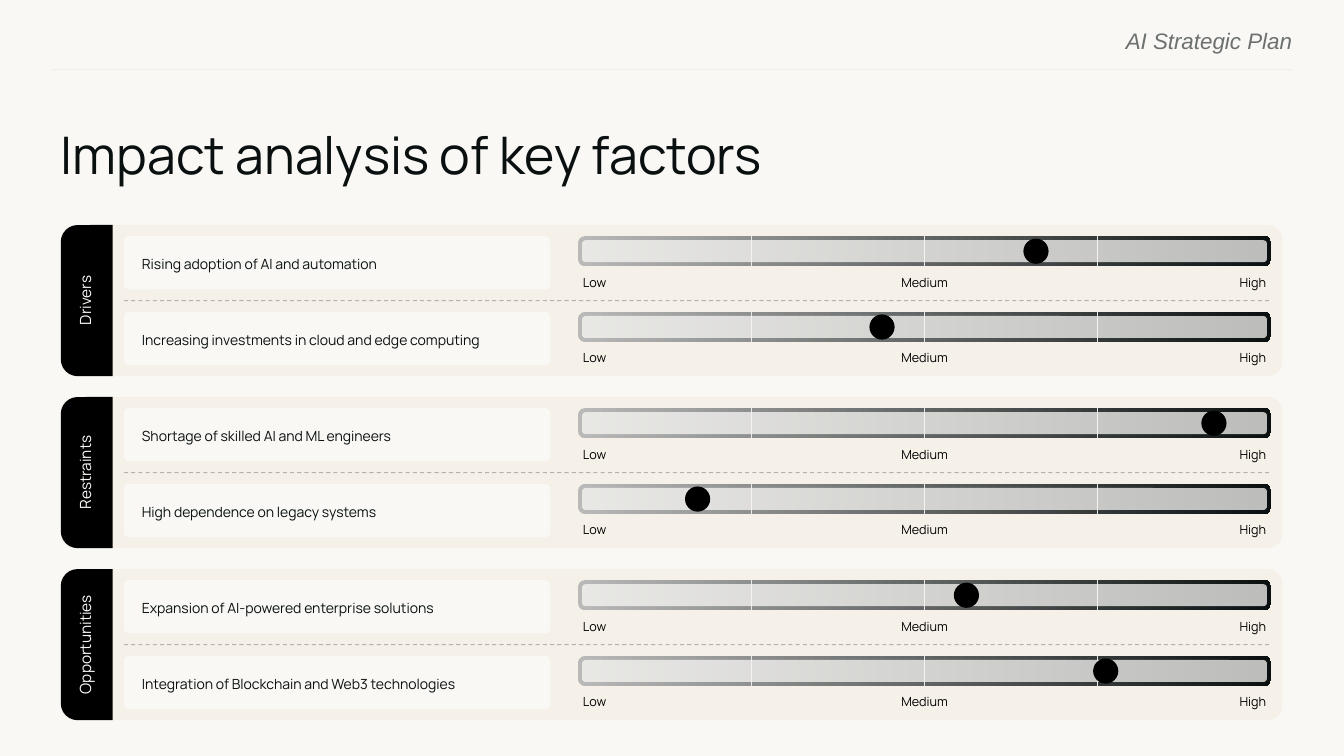
from dataclasses import dataclass

from pptx import Presentation
from pptx.dml.color import RGBColor
from pptx.enum.dml import MSO_LINE
from pptx.enum.shapes import MSO_CONNECTOR, MSO_SHAPE
from pptx.enum.text import MSO_ANCHOR, PP_ALIGN
from pptx.oxml.ns import qn
from pptx.oxml.xmlchemy import OxmlElement
from pptx.shapes.autoshape import Shape
from pptx.shapes.connector import Connector
from pptx.slide import Slide
from pptx.util import Pt

ROUNDED = MSO_SHAPE.ROUNDED_RECTANGLE
TAB = MSO_SHAPE.ROUND_2_SAME_RECTANGLE
OVAL = MSO_SHAPE.OVAL
STRAIGHT = MSO_CONNECTOR.STRAIGHT
DASH = MSO_LINE.DASH
TOP, MIDDLE = MSO_ANCHOR.TOP, MSO_ANCHOR.MIDDLE
LEFT, CENTER, RIGHT = PP_ALIGN.LEFT, PP_ALIGN.CENTER, PP_ALIGN.RIGHT

PAPER = RGBColor(0xF9, 0xF8, 0xF5)
SAND = RGBColor(0xF5, 0xF1, 0xE8)
INK = RGBColor(0x09, 0x10, 0x0F)
BLACK = RGBColor(0x00, 0x00, 0x00)
SILVER = RGBColor(0xB9, 0xB9, 0xB9)
DIVIDER = RGBColor(0xE9, 0xE7, 0xE7)
RULE = RGBColor(0xEF, 0xEF, 0xEF)
GRAY = RGBColor(0x6C, 0x70, 0x6F)

PANEL_LEFT, PANEL_TOP, PANEL_WIDTH, PANEL_HEIGHT = 43.4, 160.7, 872.6, 108
PANEL_STEP = 122.86
TAB_WIDTH = 37
ROW_INSET, ROW_STEP = 7.9, 54.15
CARD_LEFT, CARD_WIDTH, CARD_HEIGHT = 88.5, 304.6, 38.2
BAR_LEFT, BAR_WIDTH, BAR_HEIGHT = 412.8, 495.2, 21.7
SCALE_OFFSET, SCALE_HEIGHT = 23.9, 16.6
KNOB_SIZE = 18


@dataclass(frozen=True)
class Box:
    left: float
    top: float
    width: float
    height: float


@dataclass(frozen=True)
class TextStyle:
    size: float
    color: RGBColor
    font: str = "Manrope"
    italic: bool = False
    align: PP_ALIGN = LEFT
    anchor: MSO_ANCHOR = TOP
    insets: tuple[float, float, float, float] = (0, 0, 0, 0)
    line_spacing: float | None = None


@dataclass(frozen=True)
class Factor:
    text: str
    knob_center: float


@dataclass(frozen=True)
class Group:
    name: str
    label_width: float
    factors: tuple[Factor, ...]


@dataclass(frozen=True)
class ScaleLabel:
    text: str
    left: float
    width: float
    align: PP_ALIGN
    right_inset: float


HEADER = TextStyle(16, GRAY, font="Arial", italic=True, align=RIGHT)
TITLE = TextStyle(37, INK)
CARD = TextStyle(10, INK, anchor=MIDDLE, insets=(11.8, 0, 7.2, 2.9), line_spacing=1.4)
TAB_LABEL = TextStyle(11, PAPER, align=CENTER, anchor=MIDDLE, insets=(7.2, 3.6, 7.2, 5.8))

GROUPS = (
    Group("Drivers", 63.4, (
        Factor("Rising adoption of AI and automation", 740),
        Factor("Increasing investments in cloud and edge computing", 630),
    )),
    Group("Restraints", 87.1, (
        Factor("Shortage of skilled AI and ML engineers", 867.1),
        Factor("High dependence on legacy systems", 498.3),
    )),
    Group("Opportunities", 108, (
        Factor("Expansion of AI-powered enterprise solutions", 690.3),
        Factor("Integration of Blockchain and Web3 technologies", 789.8),
    )),
)

SCALE_LABELS = (
    ScaleLabel("Low", 412.8, 41, LEFT, 7.2),
    ScaleLabel("High", 867, 41, RIGHT, 3.6),
    ScaleLabel("Medium", 633.8, 53.2, CENTER, 3.6),
)


def write_text(shape: Shape, text: str, style: TextStyle) -> None:
    frame = shape.text_frame
    frame.word_wrap = True
    frame.vertical_anchor = style.anchor
    left, top, right, bottom = style.insets
    frame.margin_left, frame.margin_top = Pt(left), Pt(top)
    frame.margin_right, frame.margin_bottom = Pt(right), Pt(bottom)
    paragraph = frame.paragraphs[0]
    paragraph.alignment = style.align
    paragraph.line_spacing = style.line_spacing
    run = paragraph.add_run()
    run.text = text
    run.font.name = style.font
    run.font.size = Pt(style.size)
    run.font.italic = style.italic
    run.font.color.rgb = style.color


def add_text(slide: Slide, box: Box, text: str, style: TextStyle) -> Shape:
    shape = slide.shapes.add_textbox(Pt(box.left), Pt(box.top), Pt(box.width), Pt(box.height))
    write_text(shape, text, style)
    return shape


def add_block(slide: Slide, kind: MSO_SHAPE, box: Box, color: RGBColor,
              corners: tuple[float, ...] = ()) -> Shape:
    shape = slide.shapes.add_shape(kind, Pt(box.left), Pt(box.top), Pt(box.width), Pt(box.height))
    shape.shadow.inherit = False
    shape.fill.solid()
    shape.fill.fore_color.rgb = color
    shape.line.fill.background()
    for index, corner in enumerate(corners):
        shape.adjustments[index] = corner
    return shape


def add_line(slide: Slide, start: tuple[float, float], end: tuple[float, float],
             color: RGBColor) -> Connector:
    line = slide.shapes.add_connector(
        STRAIGHT, Pt(start[0]), Pt(start[1]), Pt(end[0]), Pt(end[1]))
    line.line.color.rgb = color
    line.line.width = Pt(0.75)
    line.element.spPr.append(OxmlElement("a:effectLst"))
    return line


def set_opacity(shape: Shape | Connector, percent: int) -> None:
    color = next(shape.element.spPr.iter(qn("a:srgbClr")))
    alpha = OxmlElement("a:alpha")
    alpha.set("val", str(percent * 1000))
    color.append(alpha)


def add_scale(slide: Slide, top: float, knob_center: float) -> None:
    bar = add_block(slide, ROUNDED, Box(BAR_LEFT, top, BAR_WIDTH, BAR_HEIGHT), SILVER, (0.239,))
    bar.fill.gradient()
    bar.fill.gradient_angle = 0
    for stop, color in zip(bar.fill.gradient_stops, (SILVER, INK)):
        stop.color.rgb = color
    for quarter in (1, 2, 3):
        x = BAR_LEFT + BAR_WIDTH * quarter / 4
        divider = add_line(slide, (x, top), (x, top + BAR_HEIGHT), DIVIDER)
        if quarter == 2:
            divider.begin_connect(bar, 0)
            divider.end_connect(bar, 2)
    track = add_block(slide, ROUNDED, Box(BAR_LEFT + 3, top + 3, BAR_WIDTH - 6, BAR_HEIGHT - 6),
                      PAPER, (0.16,))
    set_opacity(track, 75)
    for label in SCALE_LABELS:
        style = TextStyle(9, BLACK, align=label.align, insets=(3.6, 3.6, label.right_inset, 2.2))
        add_text(slide, Box(label.left, top + SCALE_OFFSET, label.width, SCALE_HEIGHT),
                 label.text, style)
    add_block(slide, OVAL, Box(knob_center - KNOB_SIZE / 2, top + (BAR_HEIGHT - KNOB_SIZE) / 2,
                               KNOB_SIZE, KNOB_SIZE), BLACK)


def add_group(slide: Slide, group: Group, top: float) -> None:
    add_block(slide, ROUNDED, Box(PANEL_LEFT, top, PANEL_WIDTH, PANEL_HEIGHT), SAND, (0.094,))
    middle = top + PANEL_HEIGHT / 2
    separator = add_line(slide, (CARD_LEFT, middle), (BAR_LEFT + BAR_WIDTH, middle), BLACK)
    separator.line.dash_style = DASH
    set_opacity(separator, 25)
    for index, factor in enumerate(group.factors):
        row_top = top + ROW_INSET + index * ROW_STEP
        card = add_block(slide, ROUNDED, Box(CARD_LEFT, row_top, CARD_WIDTH, CARD_HEIGHT),
                         PAPER, (0.099,))
        write_text(card, factor.text, CARD)
        add_scale(slide, row_top, factor.knob_center)
    center = PANEL_LEFT + TAB_WIDTH / 2
    tab = add_block(slide, TAB, Box(center - PANEL_HEIGHT / 2, middle - TAB_WIDTH / 2,
                                    PANEL_HEIGHT, TAB_WIDTH), BLACK, (0.328, 0))
    tab.rotation = 270
    label = add_text(slide, Box(center - group.label_width / 2, middle - 13.7,
                                group.label_width, 27.4), group.name, TAB_LABEL)
    label.rotation = 270


def main() -> None:
    presentation = Presentation()
    presentation.slide_width, presentation.slide_height = Pt(960), Pt(540)
    slide = presentation.slides.add_slide(presentation.slide_layouts[6])
    slide.background.fill.solid()
    slide.background.fill.fore_color.rgb = PAPER
    add_line(slide, (923, 49.7), (37.4, 49.7), RULE)
    add_text(slide, Box(472.3, 19.4, 450.7, 17.3), "AI Strategic Plan", HEADER)
    add_text(slide, Box(43.4, 87.8, 721.4, 49), "Impact analysis of key factors", TITLE)
    for index, group in enumerate(GROUPS):
        add_group(slide, group, PANEL_TOP + index * PANEL_STEP)
    presentation.save("out.pptx")


if __name__ == "__main__":
    main()
